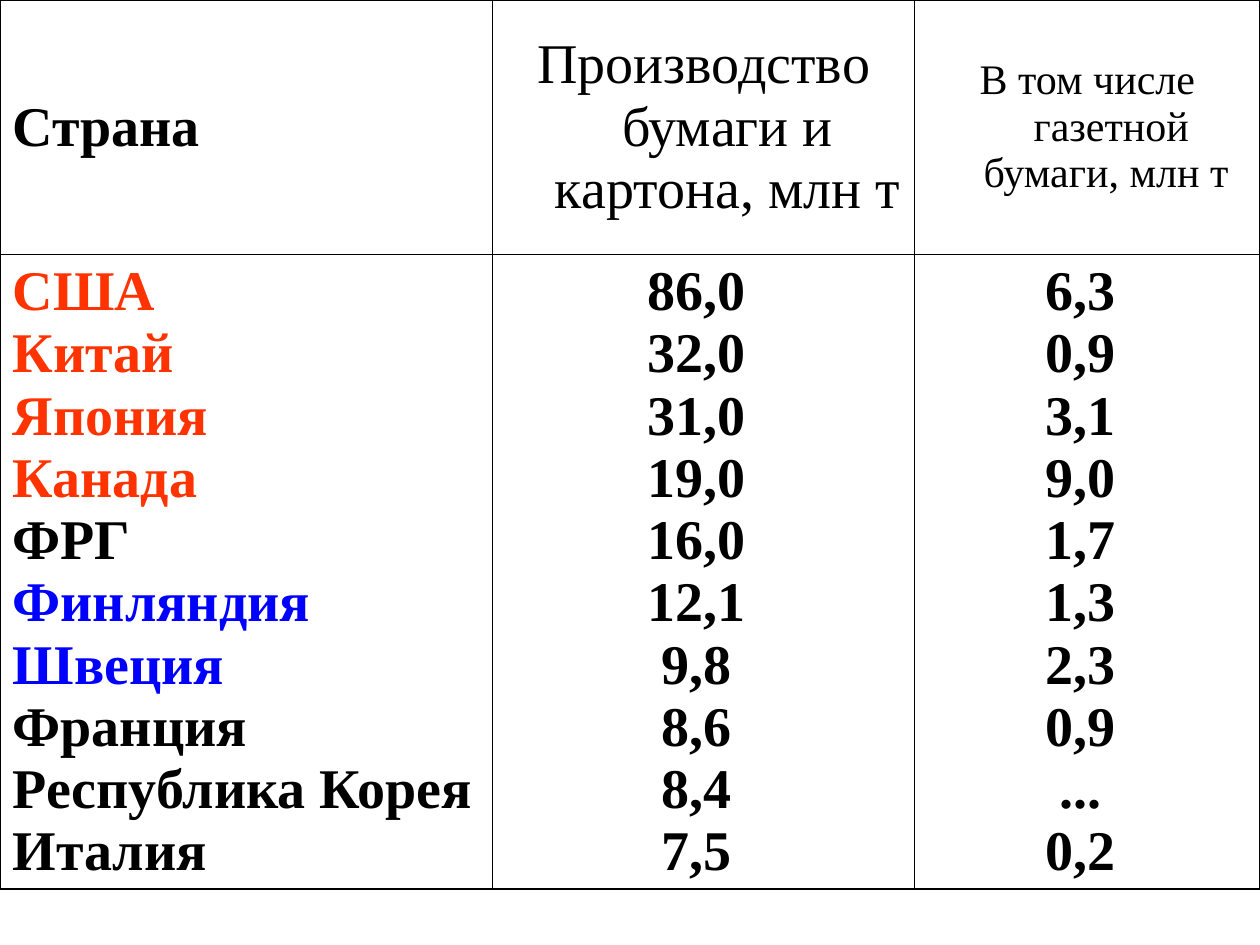
"""Build a slide with a table of paper production by country."""
from lxml.etree import SubElement
from pptx import Presentation
from pptx.dml.color import RGBColor
from pptx.enum.text import MSO_ANCHOR, PP_ALIGN
from pptx.oxml.ns import qn
from pptx.util import Inches, Pt

COLORS = {"black": "000000", "white": "FFFFFF", "red": "FF3300", "blue": "0000FF"}
FONT_NAME = "Times New Roman"
INDENT = Inches(0.38)
COLUMN_WIDTHS = (3.91, 3.35, 2.74)
ROW_HEIGHTS = (2.02, 4.84)

HEADERS = (
    ("Страна", 32, True),
    ("Производство бумаги и картона, млн т ", 32, False),
    ("В том числе газетной бумаги, млн т ", 24, False),
)
COUNTRIES = (
    ("США", "86,0 ", "6,3 ", "red"),
    ("Китай", "32,0 ", "0,9 ", "red"),
    ("Япония", "31,0 ", "3,1 ", "red"),
    ("Канада", "19,0 ", "9,0 ", "red"),
    ("ФРГ", "16,0 ", "1,7 ", "black"),
    ("Финляндия", "12,1 ", "1,3 ", "blue"),
    ("Швеция", "9,8 ", "2,3 ", "blue"),
    ("Франция", "8,6 ", "0,9 ", "black"),
    ("Республика Корея", "8,4 ", "... ", "black"),
    ("Италия", "7,5 ", "0,2 ", "black"),
)


def add_borders(cell):
    properties = cell._tc.get_or_add_tcPr()
    for position, side in enumerate(("lnL", "lnR", "lnT", "lnB")):
        line = SubElement(properties, qn(f"a:{side}"), w=str(Pt(1)))
        fill = SubElement(line, qn("a:solidFill"))
        SubElement(fill, qn("a:srgbClr"), val=COLORS["black"])
        properties.insert(position, line)


def write_cell(cell, lines, alignment, anchor):
    cell.fill.solid()
    cell.fill.fore_color.rgb = RGBColor.from_string(COLORS["white"])
    cell.vertical_anchor = anchor
    add_borders(cell)
    frame = cell.text_frame
    for index, (text, size, bold, color) in enumerate(lines):
        paragraph = frame.add_paragraph() if index else frame.paragraphs[0]
        paragraph.alignment = alignment
        properties = paragraph._p.get_or_add_pPr()
        properties.set("marL", str(INDENT))
        properties.set("indent", str(-INDENT))
        run = paragraph.add_run()
        run.text = text
        font_format = {"name": FONT_NAME, "size": Pt(size), "bold": bold}
        for name, value in font_format.items():
            setattr(run.font, name, value)
        run.font.color.rgb = RGBColor.from_string(COLORS[color])


def main():
    presentation = Presentation()
    presentation.slide_width = Inches(10)
    presentation.slide_height = Inches(7.5)
    slide = presentation.slides.add_slide(presentation.slide_layouts[6])
    table = slide.shapes.add_table(
        len(ROW_HEIGHTS), len(COLUMN_WIDTHS), 0, 0,
        Inches(sum(COLUMN_WIDTHS)), Inches(sum(ROW_HEIGHTS)),
    ).table
    table.first_row = table.horz_banding = False
    for row, height in zip(table.rows, ROW_HEIGHTS):
        row.height = Inches(height)

    for index, (width, header) in enumerate(zip(COLUMN_WIDTHS, HEADERS)):
        table.columns[index].width = Inches(width)
        alignment = PP_ALIGN.CENTER if index else PP_ALIGN.LEFT
        values = [
            (country[index], 32, True, "black" if index else country[-1])
            for country in COUNTRIES
        ]
        write_cell(table.cell(0, index), [(*header, "black")], alignment, MSO_ANCHOR.MIDDLE)
        write_cell(table.cell(1, index), values, alignment, MSO_ANCHOR.TOP)

    presentation.save("out.pptx")


if __name__ == "__main__":
    main()
